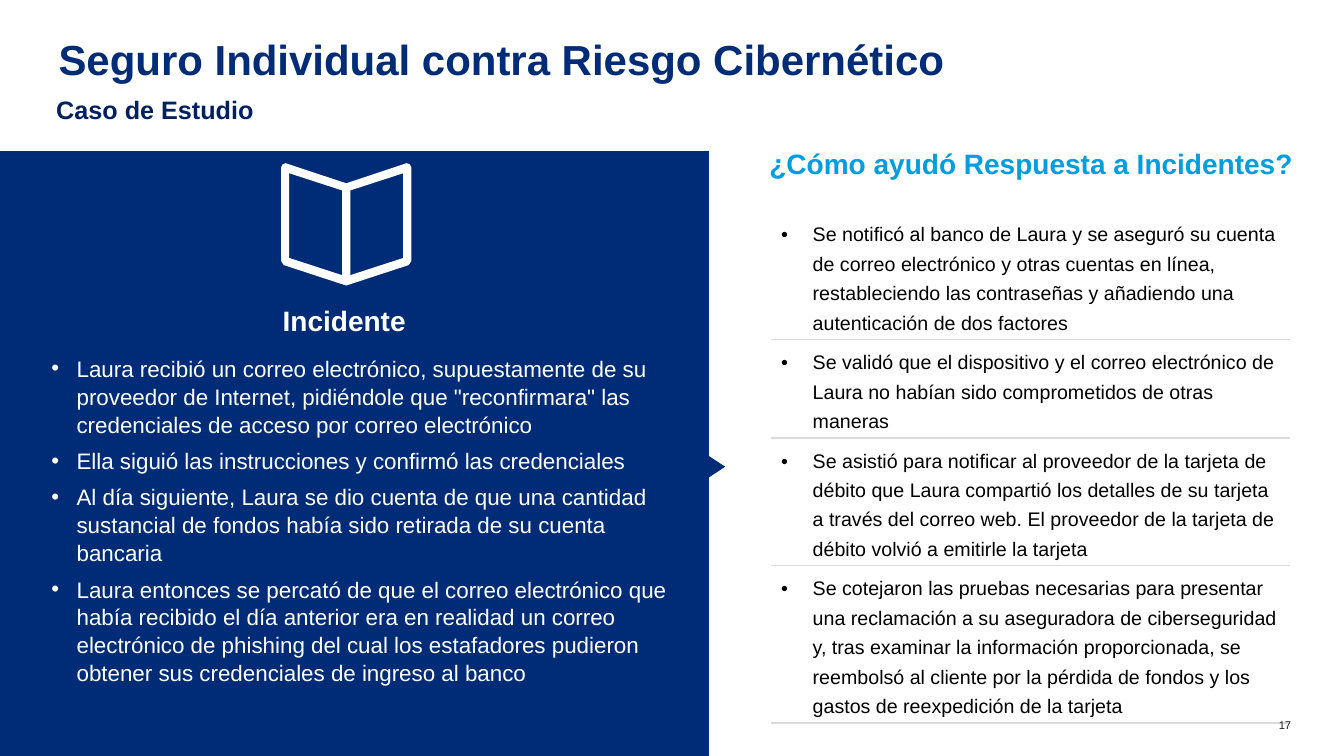
from dataclasses import dataclass
from typing import Optional

from lxml import etree
from pptx import Presentation
from pptx.dml.color import RGBColor
from pptx.enum import shapes, text
from pptx.oxml.ns import qn
from pptx.util import Pt

FONT = "Arial"
NAVY, DARK, CYAN = "002C77", "002060", "009DE0"
WHITE, BLACK, GREY, RULE = "FFFFFF", "000000", "202020", "DADADA"
LEFT, CENTER, RIGHT = text.PP_ALIGN.LEFT, text.PP_ALIGN.CENTER, text.PP_ALIGN.RIGHT


@dataclass
class Style:
    size: float
    color: str
    bold: bool = False
    align: text.PP_ALIGN = LEFT
    line: Optional[float] = None  # float: multiple of a line, Pt: exact
    after: float = 0
    indent: float = 0  # hanging indent of a bullet


@dataclass
class Label:
    left: float
    top: float
    width: float
    height: float
    paragraphs: list[str]
    style: Style
    inset: tuple[float, float] = (0, 0)
    wrap: bool = True


@dataclass
class Step:
    words: str
    lines: int


INCIDENT = [
    "Laura recibió un correo electrónico, supuestamente de su proveedor de Internet, "
    'pidiéndole que "reconfirmara" las credenciales de acceso por correo electrónico',
    "Ella siguió las instrucciones y confirmó las credenciales",
    "Al día siguiente, Laura se dio cuenta de que una cantidad sustancial de fondos "
    "había sido retirada de su cuenta bancaria",
    "Laura entonces se percató de que el correo electrónico que había recibido el día "
    "anterior era en realidad un correo electrónico de phishing del cual los estafadores "
    "pudieron obtener sus credenciales de ingreso al banco",
]

STEPS = [
    Step("Se notificó al banco de Laura y se aseguró su cuenta de correo electrónico y "
         "otras cuentas en línea, restableciendo las contraseñas y añadiendo una "
         "autenticación de dos factores", 4),
    Step("Se validó que el dispositivo y el correo electrónico de Laura no habían sido "
         "comprometidos de otras maneras", 3),
    Step("Se asistió para notificar al proveedor de la tarjeta de débito que Laura "
         "compartió los detalles de su tarjeta a través del correo web. El proveedor de "
         "la tarjeta de débito volvió a emitirle la tarjeta", 4),
    Step("Se cotejaron las pruebas necesarias para presentar una reclamación a su "
         "aseguradora de ciberseguridad y, tras examinar la información proporcionada, "
         "se reembolsó al cliente por la pérdida de fondos y los gastos de reexpedición "
         "de la tarjeta", 5),
]

LABELS = [
    Label(900, 513.4, 22.3, 9.4, ["17"], Style(8, GREY, align=RIGHT)),
    Label(36.7, 252.7, 458, 242.6, INCIDENT,
          Style(16, WHITE, line=1.04, after=6, indent=18)),
    Label(194.4, 216.7, 103, 28, ["Incidente"],
          Style(20, WHITE, True, CENTER, 0.86), (7.2, 3.6), False),
    Label(546.5, 108, 380.2, 20.9, ["¿Cómo ayudó Respuesta a Incidentes?"],
          Style(20, CYAN, True, CENTER, 0.86)),
    Label(41.8, 31, 763.9, 32.4, ["Seguro Individual contra Riesgo Cibernético"],
          Style(30, NAVY, True, line=0.8)),
    Label(33.1, 64.1, 473, 25.2, ["Caso de Estudio"], Style(18, DARK, True), (7.2, 3.6)),
]

STEP_STYLE = Style(14, BLACK, line=Pt(21), after=6, indent=22.5)
STEP_MARGIN = 3.6

# Right half of the book icon, x measured from its spine
SPINE = 247.3
COVER = [(0, 131), (43.2, 116.6), (45.4, 117.4), (46.5, 119.5), (46.5, 186.5),
         (44.6, 189.4), (0.6, 203.8)]
PAGE = [(2.9, 136.1), (2.9, 196.6), (40.7, 184.3), (40.7, 123.8)]


def rgb(color: str) -> RGBColor:
    return RGBColor.from_string(color)


def paint(sp, color: str) -> None:
    sp.shadow.inherit = False
    sp.fill.solid()
    sp.fill.fore_color.rgb = rgb(color)
    sp.line.fill.background()


def write(tf, paragraphs: list[str], style: Style) -> None:
    tf.text = "\n".join(paragraphs)
    for p in tf.paragraphs:
        p.alignment = style.align
        p.space_after = Pt(style.after)
        if style.line:
            p.line_spacing = style.line
        if style.indent:
            pPr = p._p.get_or_add_pPr()
            pPr.set("marL", str(Pt(style.indent)))
            pPr.set("indent", str(-Pt(style.indent)))
            etree.SubElement(pPr, qn("a:buFont")).set("typeface", FONT)
            etree.SubElement(pPr, qn("a:buChar")).set("char", "•")
        for r in p.runs:
            r.font.name = FONT
            r.font.size = Pt(style.size)
            r.font.bold = style.bold
            r.font.color.rgb = rgb(style.color)


def add_label(s, label: Label) -> None:
    box = s.shapes.add_textbox(Pt(label.left), Pt(label.top), Pt(label.width), Pt(label.height))
    tf = box.text_frame
    tf.word_wrap = label.wrap
    tf.margin_left = tf.margin_right = Pt(label.inset[0])
    tf.margin_top = tf.margin_bottom = Pt(label.inset[1])
    write(tf, label.paragraphs, label.style)


def add_panel(s) -> None:
    panel = s.shapes.add_shape(shapes.MSO_SHAPE.RECTANGLE, Pt(0), Pt(108), Pt(506.4), Pt(432))
    pointer = s.shapes.add_shape(shapes.MSO_SHAPE.ISOSCELES_TRIANGLE,
                                 Pt(504.7), Pt(327.6), Pt(15.1), Pt(11.5))
    pointer.rotation = 90
    for sp in (panel, pointer):
        paint(sp, NAVY)


def add_book(s) -> None:
    def place(points, side: int) -> list[tuple[int, int]]:
        return [(Pt(SPINE + side * x), Pt(y)) for x, y in points]

    outline = place(COVER, 1) + place(COVER[:0:-1], -1)
    builder = s.shapes.build_freeform(*outline[0])
    builder.add_line_segments(outline[1:], close=True)
    for side in (1, -1):
        page = place(PAGE, side)
        builder.move_to(*page[0])
        builder.add_line_segments(page[1:], close=True)
    paint(builder.convert_to_shape(), WHITE)


def set_borders(cell, top: bool) -> None:
    tcPr = cell._tc.get_or_add_tcPr()
    for tag, shown in (("lnL", False), ("lnR", False), ("lnT", top), ("lnB", True)):
        ln = etree.SubElement(tcPr, qn(f"a:{tag}"), w=str(Pt(1.5)))
        if shown:
            fill = etree.SubElement(ln, qn("a:solidFill"))
            etree.SubElement(fill, qn("a:srgbClr"), val=RULE)
        else:
            etree.SubElement(ln, qn("a:noFill"))


def add_steps(s) -> None:
    heights = [STEP_STYLE.line.pt * step.lines + 2 * STEP_MARGIN for step in STEPS]
    table = s.shapes.add_table(len(STEPS), 1, Pt(550.8), Pt(151.2),
                               Pt(370.8), Pt(sum(heights))).table
    table.first_row = table.horz_banding = False
    for i, (step, height) in enumerate(zip(STEPS, heights)):
        table.rows[i].height = Pt(height)
        cell = table.cell(i, 0)
        cell.margin_top = cell.margin_bottom = Pt(STEP_MARGIN)
        cell.vertical_anchor = text.MSO_ANCHOR.MIDDLE
        set_borders(cell, top=i > 0)
        cell.fill.background()
        write(cell.text_frame, [step.words], STEP_STYLE)


def main() -> None:
    prs = Presentation()
    prs.slide_width, prs.slide_height = Pt(960), Pt(540)
    s = prs.slides.add_slide(prs.slide_layouts[6])
    add_panel(s)
    add_book(s)
    add_steps(s)
    for label in LABELS:
        add_label(s, label)
    prs.save("out.pptx")


if __name__ == "__main__":
    main()
